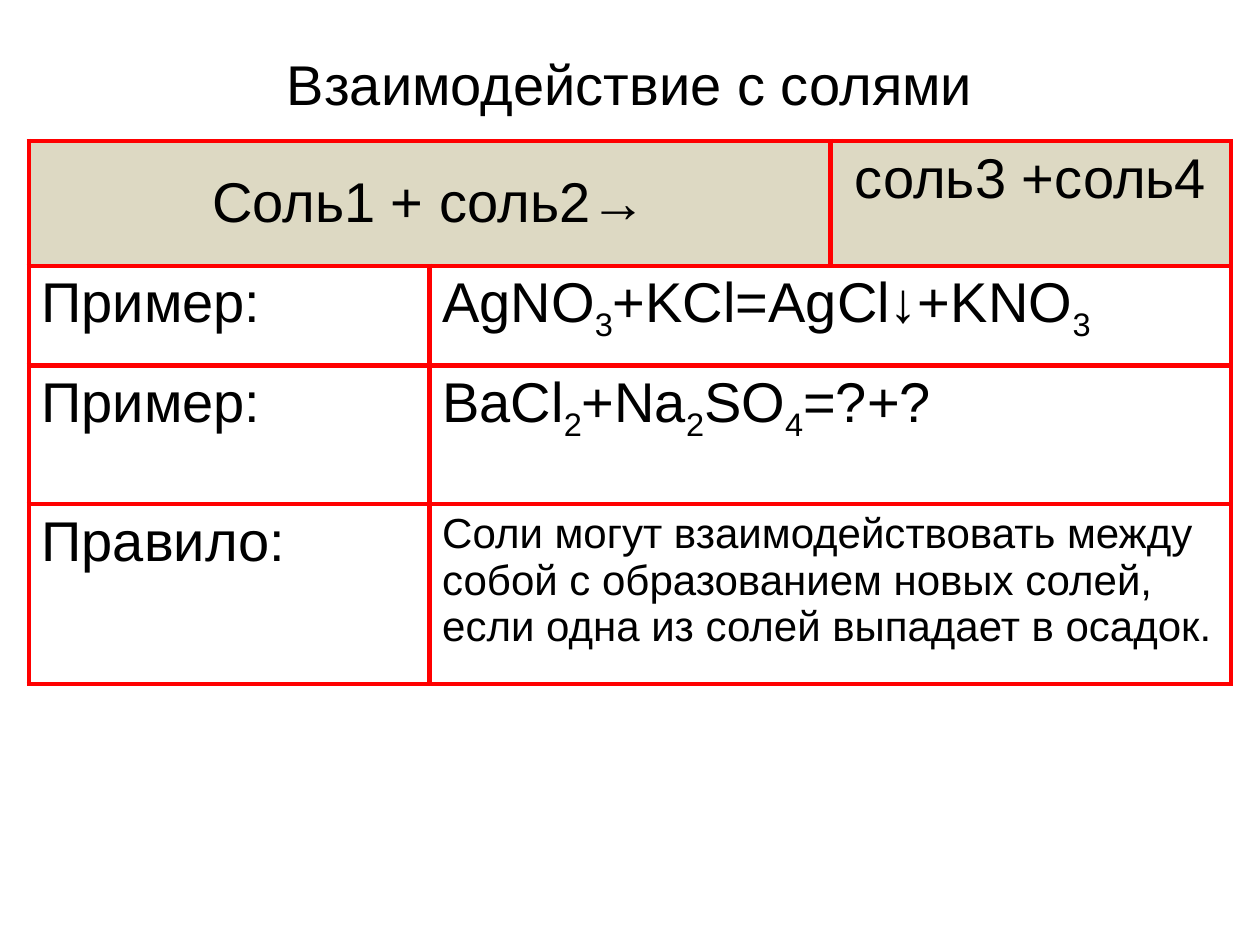
from lxml.etree import SubElement
from pptx import Presentation
from pptx.dml.color import RGBColor
from pptx.enum.shapes import MSO_SHAPE as Shape
from pptx.enum.text import MSO_ANCHOR as Anchor, PP_ALIGN as Align
from pptx.oxml.ns import qn
from pptx.util import Inches, Pt

WIDTH, HEIGHT = Inches(10), Inches(7.5)
BLACK = RGBColor(0, 0, 0)
RED = RGBColor(0xFF, 0, 0)
BEIGE = RGBColor(0xDD, 0xD9, 0xC3)
FONT = "Arial"
COLUMNS = 3
COLUMN_WIDTH = Inches(3.18)
TABLE_LEFT, TABLE_TOP = Inches(0.23), Inches(1.12)
ROW_HEIGHTS = [0.99, 0.79, 1.1, 1.43]
HEADER = ["Соль1 + соль2→", "соль3 +соль4"]
BODY = [
    ("Пример:", "AgNO_3_+KCl=AgCl↓+KNO_3_", 32),
    ("Пример:", "BaCl_2_+Na_2_SO_4_=?+?", 32),
    ("Правило:", "Соли могут взаимодействовать между собой с образованием "
     "новых солей, если одна из солей выпадает в осадок.", 24),
]


def write_text(frame, text, size=32, align=Align.LEFT):
    paragraph = frame.paragraphs[0]
    paragraph.alignment = align
    paragraph.font.name = FONT
    paragraph.font.size = Pt(size)
    paragraph.font.color.rgb = BLACK
    for index, part in enumerate(text.split("_")):
        if part:
            run = paragraph.add_run()
            run.text = part
            if index % 2:
                run.font._element.set("baseline", "-25000")


def add_title(slide, text):
    shape = slide.shapes.add_shape(
        Shape.ROUNDED_RECTANGLE, (WIDTH - Inches(6.09)) // 2, int(HEIGHT * 0.04),
        Inches(6.09), Inches(0.72))
    shape.shadow.inherit = False
    shape.fill.background()
    shape.line.fill.background()
    shape.text_frame.word_wrap = True
    shape.text_frame.vertical_anchor = Anchor.MIDDLE
    write_text(shape.text_frame, text, align=Align.CENTER)


def set_borders(cell, color, points):
    properties = cell._tc.get_or_add_tcPr()
    for side in ("a:lnL", "a:lnR", "a:lnT", "a:lnB"):
        line = SubElement(properties, qn(side), w=str(Pt(points)))
        fill = SubElement(line, qn("a:solidFill"))
        SubElement(fill, qn("a:srgbClr"), val=str(color))


def add_grid(slide):
    table = slide.shapes.add_table(
        len(ROW_HEIGHTS), COLUMNS, TABLE_LEFT, TABLE_TOP,
        COLUMN_WIDTH * COLUMNS, Inches(sum(ROW_HEIGHTS))).table
    table.first_row = table.horz_banding = False
    for column in table.columns:
        column.width = COLUMN_WIDTH
    for row, height in zip(table.rows, ROW_HEIGHTS):
        row.height = Inches(height)
    for cell in table.iter_cells():
        set_borders(cell, RED, 3)
        cell.fill.background()
    return table


def fill_header(table):
    table.cell(0, 0).merge(table.cell(0, 1))
    table.cell(0, 0).vertical_anchor = Anchor.MIDDLE
    for column, text in zip((0, 2), HEADER):
        cell = table.cell(0, column)
        cell.fill.solid()
        cell.fill.fore_color.rgb = BEIGE
        write_text(cell.text_frame, text, align=Align.CENTER)


def fill_body(table):
    for row, (label, content, size) in enumerate(BODY, start=1):
        table.cell(row, 1).merge(table.cell(row, 2))
        write_text(table.cell(row, 0).text_frame, label)
        write_text(table.cell(row, 1).text_frame, content, size)


def main():
    presentation = Presentation()
    presentation.slide_width, presentation.slide_height = WIDTH, HEIGHT
    slide = presentation.slides.add_slide(presentation.slide_layouts[6])
    add_title(slide, "Взаимодействие с солями")
    table = add_grid(slide)
    fill_header(table)
    fill_body(table)
    presentation.save("out.pptx")


if __name__ == "__main__":
    main()
